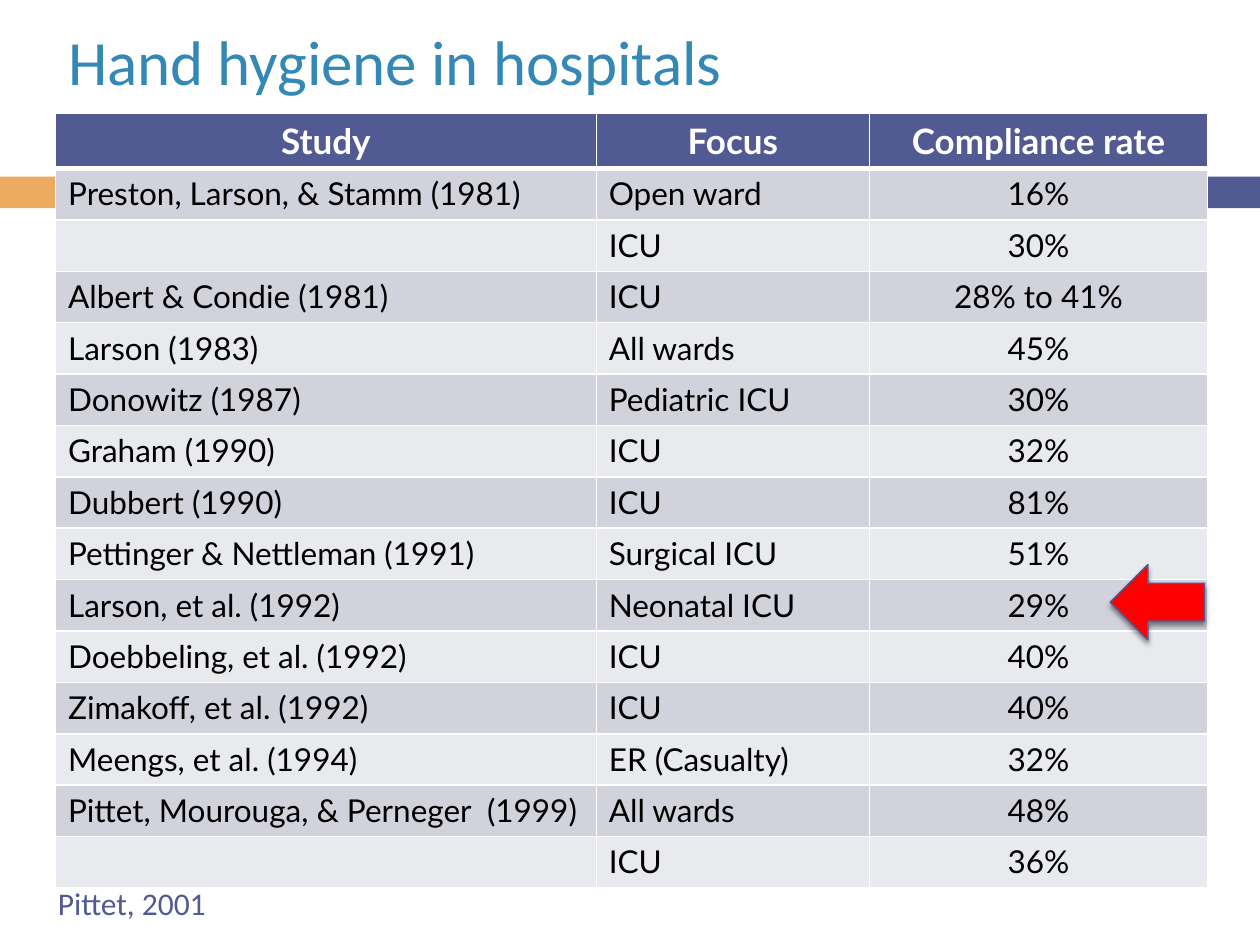
from dataclasses import dataclass

from lxml import etree
from pptx import Presentation
from pptx import util as u
from pptx.dml.color import RGBColor
from pptx.enum import shapes, text
from pptx.oxml import ns


@dataclass(frozen=True)
class Theme:
    title: str = "3488B6"
    indigo: str = "525A93"
    orange: str = "EDAA61"
    bands: tuple = ("D1D2DC", "E9EAEE")
    white: str = "FFFFFF"
    black: str = "000000"
    red: str = "FF0000"
    title_size: int = 36
    header_size: int = 20
    body_size: int = 18
    heading_font: str = "Calibri"
    table_font: str = "Lato"


theme = Theme()


def add_span(para, words, font, size, color, bold=False):
    span = para.add_run()
    span.text = words
    span.font.name = font
    span.font.size = u.Pt(size)
    span.font.bold = bold
    span.font.color.rgb = RGBColor.from_string(color)


def add_element(parent, tag, position=None, **attributes):
    element = etree.Element(ns.qn(tag), attributes)
    parent.insert(len(parent) if position is None else position, element)
    return element


deck = Presentation()
deck.slide_width, deck.slide_height = u.Cm(25.4), u.Cm(19.05)
page = deck.slides.add_slide(deck.slide_layouts[5])

# Decorative side bands
for left, width, color in [(0, 1.47, theme.orange), (1.65, 23.75, theme.indigo)]:
    band = page.shapes.add_shape(shapes.MSO_SHAPE.RECTANGLE, u.Cm(left), u.Cm(3.56), u.Cm(width), u.Cm(0.64))
    band.shadow.inherit = False
    band.fill.solid()
    band.fill.fore_color.rgb = RGBColor.from_string(color)
    band.line.fill.background()

# Title
title = page.shapes.title
title.left, title.top, title.width, title.height = u.Cm(1.12), u.Cm(0.33), u.Cm(23.22), u.Cm(1.78)
title.text_frame.vertical_anchor = text.MSO_ANCHOR.MIDDLE
para = title.text_frame.paragraphs[0]
para.alignment = text.PP_ALIGN.LEFT
add_span(para, "Hand hygiene in hospitals", theme.heading_font, theme.title_size, theme.title)

# Compliance table
studies = [
    ("Study", "Focus", "Compliance rate"),
    ("Preston, Larson, & Stamm (1981)", "Open ward", "16%"),
    ("", "ICU", "30%"),
    ("Albert & Condie (1981)", "ICU", "28% to 41%"),
    ("Larson (1983)", "All wards", "45%"),
    ("Donowitz (1987)", "Pediatric ICU", "30%"),
    ("Graham (1990)", "ICU", "32%"),
    ("Dubbert (1990)", "ICU", "81%"),
    ("Pettinger & Nettleman (1991)", "Surgical ICU", "51%"),
    ("Larson, et al. (1992)", "Neonatal ICU", "29%"),
    ("Doebbeling, et al. (1992)", "ICU", "40%"),
    ("Zimakoff, et al. (1992)", "ICU", "40%"),
    ("Meengs, et al. (1994)", "ER (Casualty)", "32%"),
    ("Pittet, Mourouga, & Perneger  (1999)", "All wards", "48%"),
    ("", "ICU", "36%"),
]
table = page.shapes.add_table(len(studies), 3, u.Cm(1.12), u.Cm(2.29), u.Cm(23.22), u.Cm(15.54)).table
for column, width in zip(table.columns, (10.9, 5.51, 6.81)):
    column.width = u.Cm(width)

for row, study in enumerate(studies):
    header = row == 0
    for col, words in enumerate(study):
        cell = table.cell(row, col)
        cell.fill.solid()
        fill = theme.indigo if header else theme.bands[(row - 1) % 2]
        cell.fill.fore_color.rgb = RGBColor.from_string(fill)
        if header:
            cell.vertical_anchor = text.MSO_ANCHOR.MIDDLE
        para = cell.text_frame.paragraphs[0]
        para.alignment = text.PP_ALIGN.CENTER if header or col == 2 else text.PP_ALIGN.LEFT
        if words:
            size = theme.header_size if header else theme.body_size
            color = theme.white if header else theme.black
            add_span(para, words, theme.table_font, size, color, header)

        # White rules, thicker between header and body
        properties = cell._tc.get_or_add_tcPr()
        for position, side in enumerate("LRTB"):
            thick = (row, side) in [(0, "B"), (1, "T")]
            rule = add_element(properties, f"a:ln{side}", position, w=str(u.Pt(3 if thick else 1)))
            add_element(add_element(rule, "a:solidFill"), "a:srgbClr", val=theme.white)

# Source note
box = page.shapes.add_textbox(u.Cm(0.51), u.Cm(17.7), u.Cm(3.89), u.Cm(1.02))
box.text_frame.word_wrap = True
box.text_frame.auto_size = text.MSO_AUTO_SIZE.SHAPE_TO_FIT_TEXT
para = box.text_frame.paragraphs[0]
para.alignment = text.PP_ALIGN.RIGHT
add_span(para, "Pittet, 2001", theme.heading_font, theme.body_size, theme.indigo)

# Arrow marking the neonatal ICU rate
arrow = page.shapes.add_shape(shapes.MSO_SHAPE.LEFT_ARROW, u.Cm(22.38), u.Cm(11.38), u.Cm(1.9), u.Cm(1.52))
arrow.shadow.inherit = False
arrow.fill.solid()
arrow.fill.fore_color.rgb = RGBColor.from_string(theme.red)
arrow.line.color.rgb = RGBColor.from_string(theme.indigo)
arrow.line.width = u.Pt(0.79)
effects = arrow._element.spPr.find(ns.qn("a:effectLst"))
shadow = add_element(effects, "a:outerShdw", blurRad=str(u.Pt(3)), dist=str(u.Pt(2.4)),
                     dir="5400000", rotWithShape="0")
add_element(add_element(shadow, "a:srgbClr", val=theme.black), "a:alpha", val="45000")

deck.save("out.pptx")
